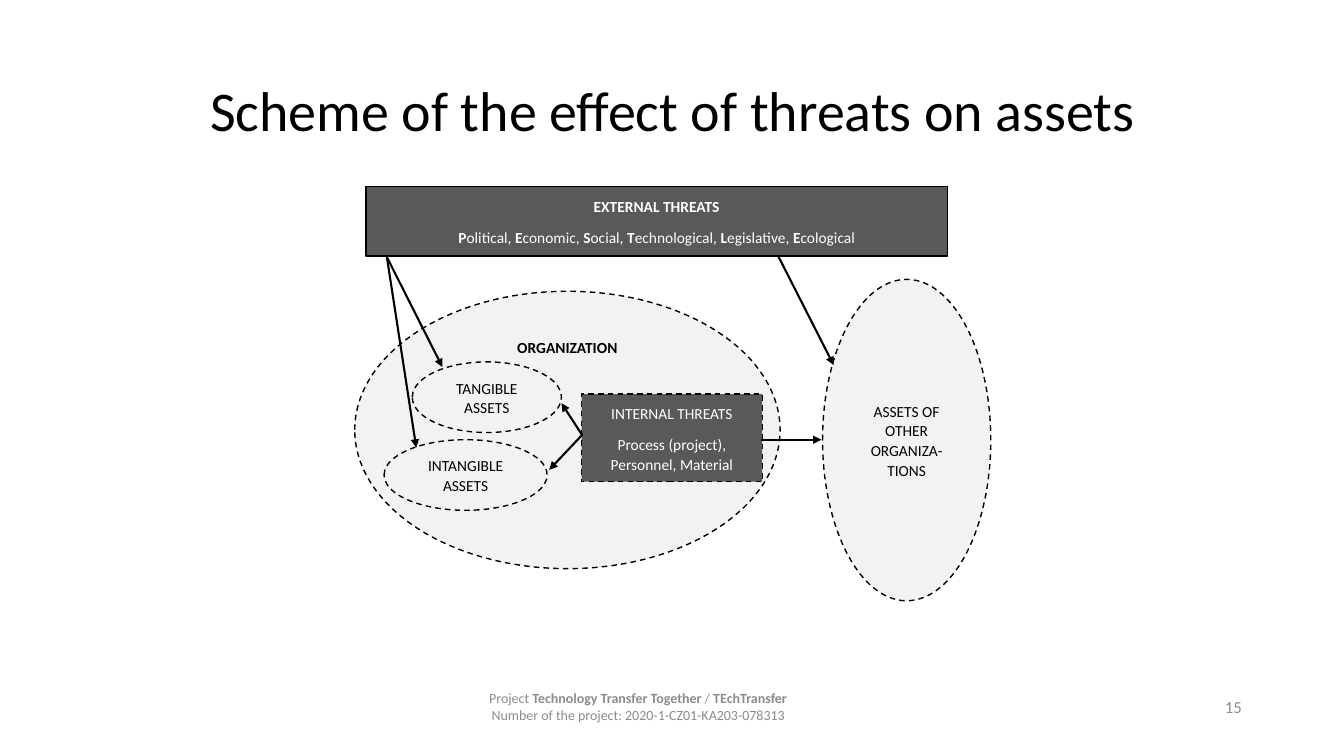
from dataclasses import dataclass

from lxml import etree
from pptx import Presentation
from pptx.dml.color import RGBColor
from pptx.enum.dml import MSO_LINE
from pptx.enum.shapes import MSO_CONNECTOR, MSO_SHAPE
from pptx.enum.text import MSO_ANCHOR, PP_ALIGN
from pptx.oxml.ns import qn
from pptx.util import Cm, Pt


@dataclass(frozen=True)
class Theme:
    font: str = "Calibri"
    black: RGBColor = RGBColor(0, 0, 0)
    white: RGBColor = RGBColor(255, 255, 255)
    dark: RGBColor = RGBColor(0x59, 0x59, 0x59)
    light: RGBColor = RGBColor(0xF2, 0xF2, 0xF2)
    muted: RGBColor = RGBColor(0x8C, 0x8C, 0x8C)
    title: int = 40
    label: int = 11
    number: int = 12
    footer: int = 10


THEME = Theme()


def write(tf, lines, size, color, align=PP_ALIGN.CENTER, anchor=MSO_ANCHOR.MIDDLE,
          spacing=1.0, after=0):
    tf.word_wrap = True
    tf.vertical_anchor = anchor
    for i, line in enumerate(lines):
        p = tf.add_paragraph() if i else tf.paragraphs[0]
        p.alignment = align
        p.line_spacing = spacing
        p.space_after = Pt(after)
        for j, part in enumerate(line.split("*")):
            if part:
                r = p.add_run()
                r.text = part
                r.font.name = THEME.font
                r.font.size = Pt(size)
                r.font.bold = j % 2 == 1
                r.font.color.rgb = color


def place(sp, x, y, w, h):
    sp.left, sp.top, sp.width, sp.height = Cm(x), Cm(y), Cm(w), Cm(h)


def add_title(s, box):
    sp = s.shapes.title
    place(sp, *box)
    write(sp.text_frame, ["Scheme of the effect of threats on assets"],
          THEME.title, THEME.black, spacing=0.9)


def add_footer(s, box):
    x, y, w, h = box
    number_w = 2.26
    project = s.shapes.add_textbox(Cm(x), Cm(y), Cm(9.7), Cm(h))
    write(project.text_frame,
          ["Project *Technology Transfer Together* / *TEchTransfer*",
           "Number of the project: 2020-1-CZ01-KA203-078313"],
          THEME.footer, THEME.muted)
    number = s.shapes.add_textbox(Cm(x + w - number_w), Cm(y), Cm(number_w), Cm(h))
    write(number.text_frame, ["15"], THEME.number, THEME.muted, PP_ALIGN.RIGHT)


def add_node(s, kind, box, lines, dashed=True, anchor=MSO_ANCHOR.MIDDLE):
    sp = s.shapes.add_shape(kind, *map(Cm, box))
    sp.shadow.inherit = False
    threat = kind == MSO_SHAPE.RECTANGLE
    sp.fill.solid()
    sp.fill.fore_color.rgb = THEME.dark if threat else THEME.light
    sp.line.color.rgb = THEME.black
    sp.line.width = Pt(1)
    if dashed:
        sp.line.dash_style = MSO_LINE.DASH
    write(sp.text_frame, lines, THEME.label, THEME.white if threat else THEME.black,
          anchor=anchor, spacing=1.07, after=8)


def add_arrow(s, x1, y1, x2, y2):
    cxn = s.shapes.add_connector(MSO_CONNECTOR.STRAIGHT, Cm(x1), Cm(y1), Cm(x2), Cm(y2))
    cxn.line.color.rgb = THEME.black
    cxn.line.width = Pt(1.5)
    etree.SubElement(cxn.line._get_or_add_ln(), qn("a:tailEnd"), type="triangle")
    etree.SubElement(cxn._element.spPr, qn("a:effectLst"))


def add_scheme(s, box):
    x, y, w, h = box
    rect, oval = MSO_SHAPE.RECTANGLE, MSO_SHAPE.OVAL

    def at(left, top, width, height):
        return x + left, y + top, width, height

    others_w = 4.24
    add_node(s, rect, at(0.28, 0, 14.66, 1.75),
             ["*EXTERNAL THREATS*",
              "*P*olitical, *E*conomic, *S*ocial, *T*echnological,* L*egislative,* E*cological"],
             dashed=False)
    add_node(s, oval, at(0, 2.64, 10.72, 6.99), ["*ORGANIZATION*"], anchor=MSO_ANCHOR.TOP)
    add_node(s, oval, at(1.45, 4.42, 3.76, 1.78), ["TANGIBLE ASSETS"])
    add_node(s, oval, at(0.74, 6.38, 4.11, 1.78), ["INTANGIBLE ASSETS"])
    add_node(s, rect, at(5.72, 5.23, 4.55, 2.21),
             ["INTERNAL THREATS", "Process (project), Personnel, Material"])
    add_node(s, oval, at(w - others_w, 2.34, others_w, h - 2.34),
             ["ASSETS OF OTHER ORGANIZA-TIONS"])

    internal_left = (5.73, 6.26)
    external_left = (0.81, 1.78)
    for start, end in [
        (internal_left, (5.21, 5.46)),
        (internal_left, (4.9, 7.14)),
        (external_left, (2.21, 4.55)),
        (external_left, (1.55, 6.58)),
        ((10.24, 6.38), (11.76, 6.38)),
        ((10.67, 1.75), (12.07, 4.5)),
    ]:
        add_arrow(s, x + start[0], y + start[1], x + end[0], y + end[1])


def main():
    prs = Presentation()
    prs.slide_width, prs.slide_height = Cm(33.87), Cm(19.05)
    s = prs.slides.add_slide(prs.slide_layouts[5])
    add_title(s, (2.34, 1.02, 29.21, 3.68))
    add_footer(s, (11.23, 17.3, 20.32, 1))
    add_scheme(s, (8.94, 4.7, 16.03, 10.44))
    prs.save("out.pptx")


if __name__ == "__main__":
    main()
